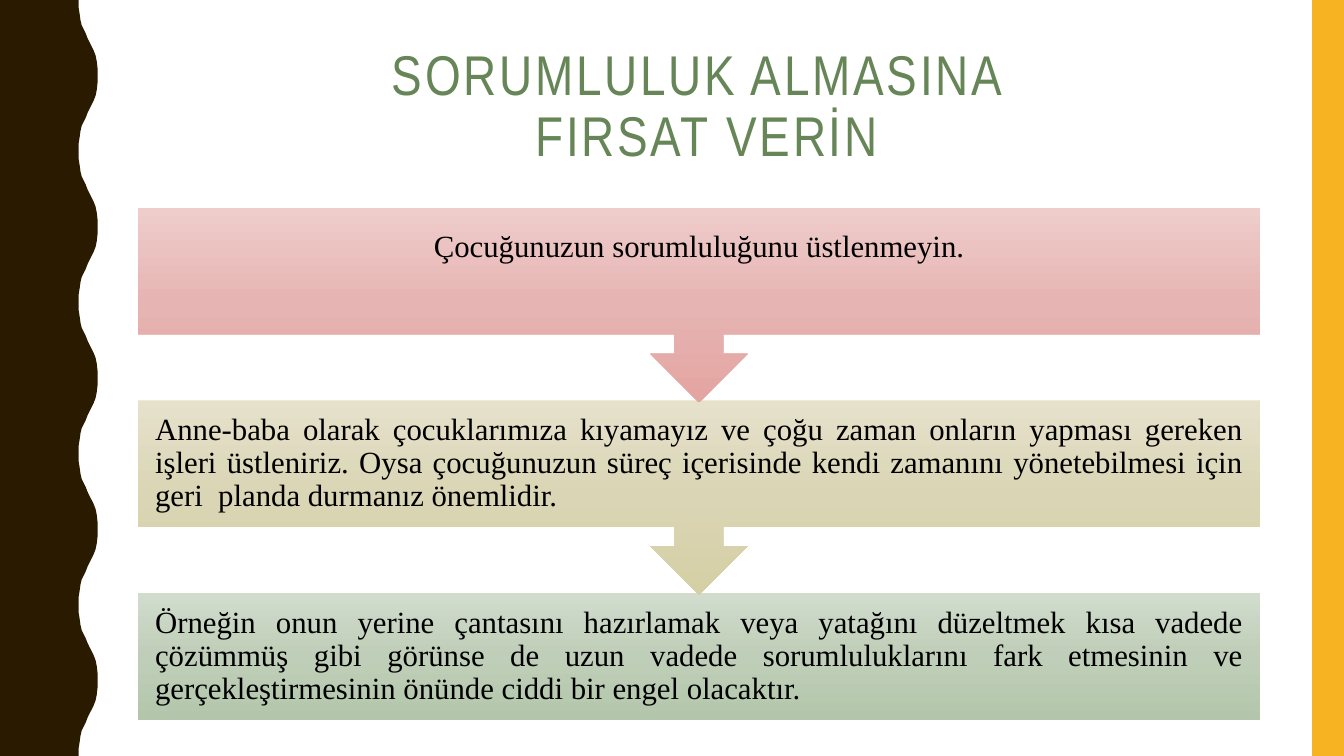
from copy import deepcopy

from pptx import Presentation
from pptx.dml.color import RGBColor
from pptx.enum.shapes import MSO_SHAPE
from pptx.enum.text import MSO_ANCHOR, PP_ALIGN
from pptx.oxml.ns import qn
from pptx.util import Cm, Pt

BROWN = RGBColor(0x2A, 0x1A, 0x00)
AMBER = RGBColor(0xF8, 0xB3, 0x23)
GREEN = RGBColor(0x67, 0x86, 0x58)
BLACK = RGBColor(0x00, 0x00, 0x00)
# Gradients from top to bottom
ROSE = [RGBColor(0xEE, 0xCD, 0xCB), RGBColor(0xE6, 0xB4, 0xB2), RGBColor(0xE4, 0xA4, 0xA1)]
SAND = [RGBColor(0xE5, 0xE1, 0xCB), RGBColor(0xDA, 0xD5, 0xB4), RGBColor(0xD5, 0xCF, 0xA5)]
SAGE = [RGBColor(0xD1, 0xDC, 0xCD), RGBColor(0xBF, 0xCE, 0xB8), RGBColor(0xB3, 0xC6, 0xAB)]

WIDTH, HEIGHT = 33.87, 19.05
LEFT, CONTENT_WIDTH = 3.48, 28.27
STEP_TOP, STEP_PITCH = 5.24, 4.85
BOX_HEIGHT, CALLOUT_HEIGHT = 3.2, 4.9
INSET = 0.43

# One outward half of a wave on the left band, as (x, y) in cm
WAVE_PERIOD, WAVE_COUNT = 3.81, 5
HALF_WAVE = [
    (1.98, 0), (1.98, 0.18), (2.01, 0.36), (2.03, 0.51), (2.06, 0.64),
    (2.11, 0.74), (2.16, 0.84), (2.21, 0.97), (2.26, 1.07), (2.31, 1.17),
    (2.36, 1.27), (2.41, 1.4), (2.44, 1.55), (2.46, 1.73), (2.46, 1.9),
]

# Text, gradient, alignment, bottom inset
STEPS = [
    ("Çocuğunuzun sorumluluğunu üstlenmeyin.", ROSE, PP_ALIGN.CENTER, 1.6),
    ("Anne-baba olarak çocuklarımıza kıyamayız ve çoğu zaman onların yapması "
     "gereken işleri üstleniriz. Oysa çocuğunuzun süreç içerisinde kendi "
     "zamanını yönetebilmesi için geri  planda durmanız önemlidir.",
     SAND, PP_ALIGN.JUSTIFY, INSET),
    ("Örneğin onun yerine çantasını hazırlamak veya yatağını düzeltmek kısa "
     "vadede çözümmüş gibi görünse de uzun vadede sorumluluklarını fark "
     "etmesinin ve gerçekleştirmesinin önünde ciddi bir engel olacaktır.",
     SAGE, PP_ALIGN.JUSTIFY, INSET),
]


def fill_plain(sp, color):
    sp.shadow.inherit = False
    sp.fill.solid()
    sp.fill.fore_color.rgb = color
    sp.line.fill.background()


def fill_gradient(sp, colors):
    sp.shadow.inherit = False
    sp.line.fill.background()
    sp.fill.gradient()
    sp.fill.gradient_angle = 270
    # The default gradient has two stops; a third is needed
    stop_list = sp._element.spPr.find(".//" + qn("a:gsLst"))
    stop_list.append(deepcopy(stop_list[-1]))
    for stop, color, position in zip(sp.fill.gradient_stops, colors, (0, 0.5, 1)):
        stop.color.rgb = color
        stop.position = position


def style_paragraph(p, font, size, color, align):
    p.alignment = align
    p.line_spacing = 0.9
    p.font.name = font
    p.font.size = Pt(size)
    p.font.color.rgb = color


def add_wavy_band(s):
    back = [(x, WAVE_PERIOD - y) for x, y in reversed(HALF_WAVE)]
    edge = [(x, y + i * WAVE_PERIOD)
            for i in range(WAVE_COUNT) for x, y in HALF_WAVE + back]
    points = [(Cm(x), Cm(y)) for x, y in edge + [(0, HEIGHT)]]
    builder = s.shapes.build_freeform(0, 0)
    builder.add_line_segments(points, close=True)
    fill_plain(builder.convert_to_shape(), BROWN)


def add_side_bar(s):
    sp = s.shapes.add_shape(MSO_SHAPE.RECTANGLE, Cm(33.07), 0, Cm(0.8), Cm(HEIGHT))
    fill_plain(sp, AMBER)


def add_title(s, lines):
    sp = s.shapes.add_textbox(Cm(LEFT), Cm(1.07), Cm(CONTENT_WIDTH), Cm(4.14))
    tf = sp.text_frame
    tf.word_wrap = True
    p = tf.paragraphs[0]
    style_paragraph(p, "Arial Narrow", 40, GREEN, PP_ALIGN.CENTER)
    for i, line in enumerate(lines):
        if i:
            p.add_line_break()
        r = p.add_run()
        r.text = line
        r._r.get_or_add_rPr().set("spc", "200")  # letter spacing of 2 pt


def add_step(s, index, text, colors, align, bottom_inset):
    is_last = index == len(STEPS) - 1
    kind = MSO_SHAPE.RECTANGLE if is_last else MSO_SHAPE.DOWN_ARROW_CALLOUT
    height = BOX_HEIGHT if is_last else CALLOUT_HEIGHT
    sp = s.shapes.add_shape(kind, Cm(LEFT), Cm(STEP_TOP + index * STEP_PITCH),
                            Cm(CONTENT_WIDTH), Cm(height))
    fill_gradient(sp, colors)
    tf = sp.text_frame
    tf.word_wrap = True
    tf.vertical_anchor = MSO_ANCHOR.MIDDLE
    tf.margin_left = tf.margin_right = tf.margin_top = Cm(INSET)
    tf.margin_bottom = Cm(bottom_inset)
    p = tf.paragraphs[0]
    p.text = text
    style_paragraph(p, "Times New Roman", 22, BLACK, align)


def main():
    prs = Presentation()
    prs.slide_width, prs.slide_height = Cm(WIDTH), Cm(HEIGHT)
    s = prs.slides.add_slide(prs.slide_layouts[6])

    # Side decoration
    add_wavy_band(s)
    add_side_bar(s)

    # Title and steps; each arrow tip lies over the next box
    add_title(s, ["SORUMLULUK ALMASINA", " FIRSAT VERİN"])
    for index, step in reversed(list(enumerate(STEPS))):
        add_step(s, index, *step)

    prs.save("out.pptx")


if __name__ == "__main__":
    main()
